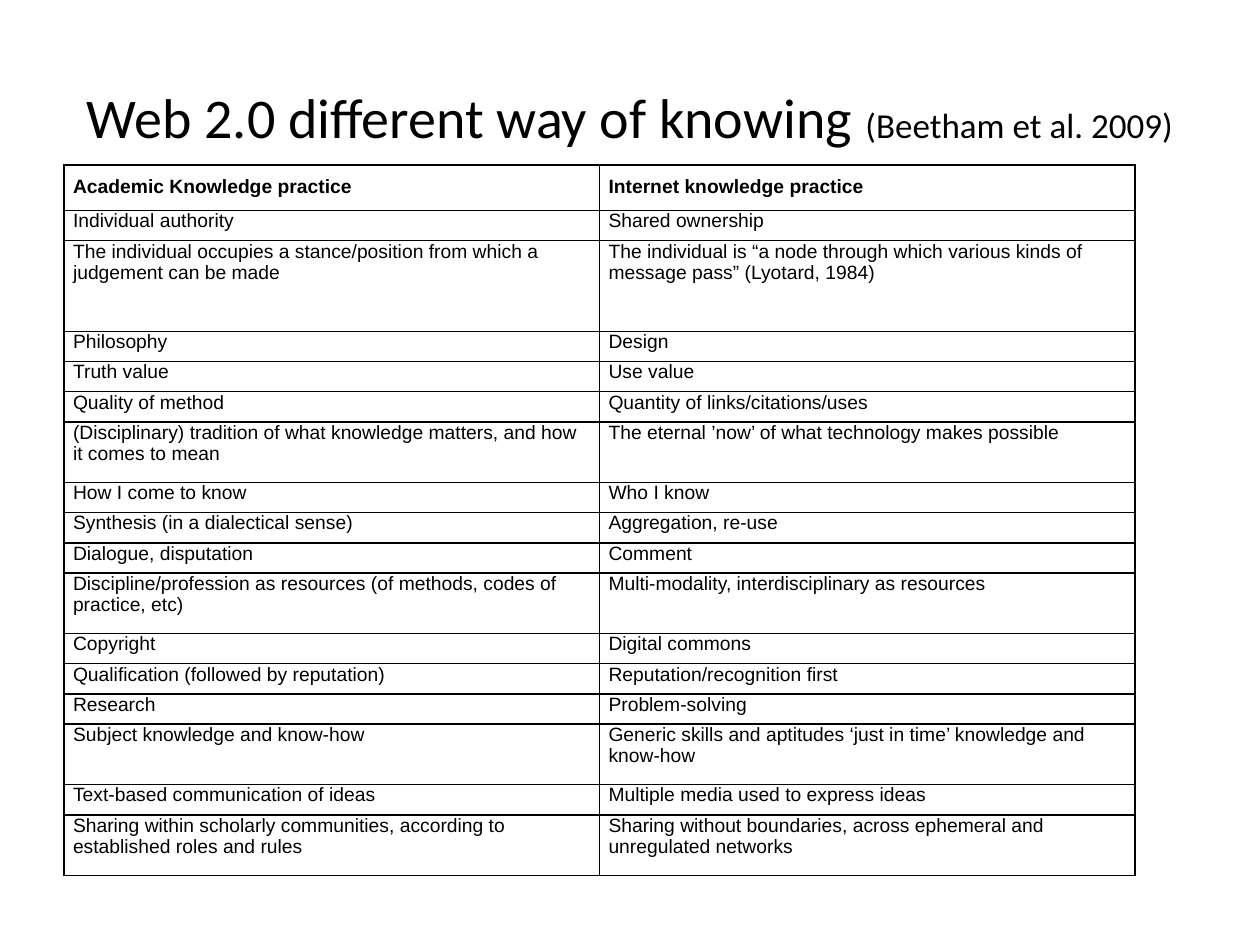
from pptx import Presentation
from pptx.dml.color import RGBColor
from pptx.enum.text import MSO_ANCHOR, PP_ALIGN
from pptx.oxml import parse_xml
from pptx.oxml.ns import nsdecls
from pptx.util import Inches, Pt

BLACK = RGBColor(0x00, 0x00, 0x00)
LINE_H = 0.24  # height of a one-line row, in inches

# Row height in lines, academic practice, internet practice
ROWS = [
    (1.5, "Academic Knowledge practice", "Internet knowledge practice"),
    (1, "Individual authority", "Shared ownership"),
    (3, "The individual occupies a stance/position from which a judgement can be made",
     "The individual is “a node through which various kinds of message pass” (Lyotard, 1984)"),
    (1, "Philosophy", "Design"),
    (1, "Truth value", "Use value"),
    (1, "Quality of method", "Quantity of links/citations/uses"),
    (2, "(Disciplinary) tradition of what knowledge matters, and how it comes to mean",
     "The eternal ’now’ of what technology makes possible"),
    (1, "How I come to know", "Who I know"),
    (1, "Synthesis (in a dialectical sense)", "Aggregation, re-use"),
    (1, "Dialogue, disputation", "Comment"),
    (2, "Discipline/profession as resources (of methods, codes of practice, etc)",
     "Multi-modality, interdisciplinary as resources"),
    (1, "Copyright", "Digital commons"),
    (1, "Qualification (followed by reputation)", "Reputation/recognition first"),
    (1, "Research", "Problem-solving"),
    (2, "Subject knowledge and know-how",
     "Generic skills and aptitudes ‘just in time’ knowledge and know-how"),
    (1, "Text-based communication of ideas", "Multiple media used to express ideas"),
    (2, "Sharing within scholarly communities, according to established roles and rules",
     "Sharing without boundaries, across ephemeral and unregulated networks"),
]


def add_run(p, text, font, size, bold=False):
    r = p.add_run()
    r.text = text
    r.font.name = font
    r.font.size = Pt(size)
    r.font.bold = bold
    r.font.color.rgb = BLACK


def add_borders(cell):
    tcPr = cell._tc.get_or_add_tcPr()
    for i, side in enumerate(("lnL", "lnR", "lnT", "lnB")):
        tcPr.insert(i, parse_xml(
            f'<a:{side} {nsdecls("a")} w="{Pt(1)}"><a:solidFill>'
            f'<a:srgbClr val="{BLACK}"/></a:solidFill></a:{side}>'))


prs = Presentation()
prs.slide_width, prs.slide_height = Inches(10), Inches(7.5)
s = prs.slides.add_slide(prs.slide_layouts[5])

# Title with its citation
title = s.shapes.title
title.left, title.top = Inches(0.5), Inches(0.3)
title.width, title.height = Inches(9), Inches(1.25)
tf = title.text_frame
tf.vertical_anchor = MSO_ANCHOR.MIDDLE
p = tf.paragraphs[0]
p.alignment = PP_ALIGN.CENTER
add_run(p, "Web 2.0 different way of knowing ", "Calibri", 32)
add_run(p, "(Beetham et al. 2009)", "Calibri", 20)

# Comparison table
total = sum(lines for lines, *_ in ROWS) * LINE_H
table = s.shapes.add_table(len(ROWS), 2, Inches(0.51), Inches(1.31),
                           Inches(8.5), Inches(total)).table
table.first_row = table.horz_banding = False
for col in table.columns:
    col.width = Inches(4.25)

for i, (lines, *texts) in enumerate(ROWS):
    header = i == 0
    table.rows[i].height = Inches(lines * LINE_H)
    for j, text in enumerate(texts):
        cell = table.cell(i, j)
        cell.fill.background()
        cell.margin_left = cell.margin_right = Inches(0.07)
        cell.margin_top = cell.margin_bottom = 0
        add_borders(cell)
        p = cell.text_frame.paragraphs[0]
        p.space_before = p.space_after = Pt(12 if header else 6)
        if header:
            p.line_spacing = 1.5
        add_run(p, text, "Arial", 11, bold=header)

prs.save("out.pptx")
